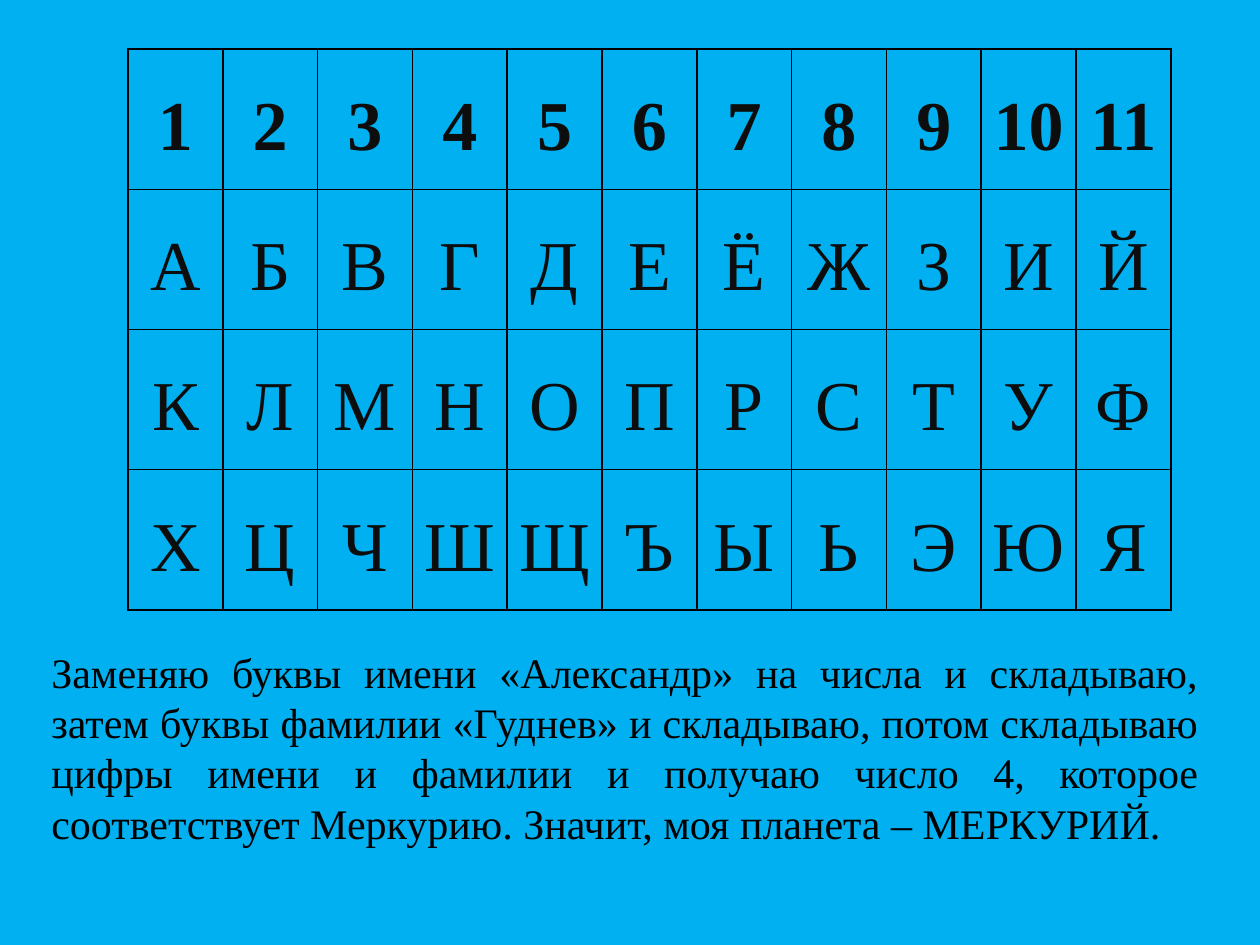
"""Build a slide with an alphabet number table and an explanation below it."""
from lxml import etree
from pptx import Presentation
from pptx.dml.color import RGBColor
from pptx.enum.text import MSO_ANCHOR, MSO_AUTO_SIZE, PP_ALIGN
from pptx.oxml.ns import qn
from pptx.util import Emu, Pt

CENTER, JUSTIFY = PP_ALIGN.CENTER, PP_ALIGN.JUSTIFY
MIDDLE = MSO_ANCHOR.MIDDLE
GROW = MSO_AUTO_SIZE.SHAPE_TO_FIT_TEXT
FONT = "Times New Roman"
ALPHABET = "АБВГДЕЁЖЗИЙКЛМНОПРСТУФХЦЧШЩЪЫЬЭЮЯ"
COLUMNS = 11
EXPLANATION = (
    "Заменяю буквы имени «Александр» на числа и складываю, "
    "затем буквы фамилии «Гуднев» и складываю, потом складываю "
    "цифры имени и фамилии и получаю число 4, которое "
    "соответствует Меркурию. Значит, моя планета – МЕРКУРИЙ."
)


def px(n):
    """Convert pixels to EMU at 126 pixels per inch."""
    return Emu(round(n * 914400 / 126))


def color(value):
    """Return the colour for a hex string."""
    return RGBColor.from_string(value)


def write(tf, text, size, fill="000000", bold=False, align=CENTER, spacing=None):
    """Write one formatted paragraph into a text frame."""
    p = tf.paragraphs[0]
    p.alignment = align
    p.line_spacing = spacing
    r = p.add_run()
    r.text = text
    r.font.name = FONT
    r.font.size = Pt(size)
    r.font.bold = bold
    r.font.color.rgb = color(fill)


def add_border(cell, side, width, fill="000000"):
    """Draw one side of a cell border."""
    ln = etree.SubElement(cell._tc.get_or_add_tcPr(), qn(f"a:ln{side}"), w=str(Pt(width)))
    solid = etree.SubElement(ln, qn("a:solidFill"))
    etree.SubElement(solid, qn("a:srgbClr"), val=fill)


def add_grid(slide, rows, x, y, w, h):
    """Add a transparent table with a bold first row and a heavier frame."""
    last_row, last_col = len(rows) - 1, len(rows[0]) - 1
    table = slide.shapes.add_table(len(rows), len(rows[0]), px(x), px(y), px(w), px(h)).table
    table.first_row = table.horz_banding = False
    for i, row in enumerate(rows):
        for j, text in enumerate(row):
            cell = table.cell(i, j)
            cell.vertical_anchor = MIDDLE
            cell.margin_left = cell.margin_right = px(9)
            cell.margin_top = cell.margin_bottom = 0
            outer = {"L": j == 0, "R": j == last_col, "T": i == 0, "B": i == last_row}
            for side, is_outer in outer.items():
                add_border(cell, side, 1.5 if is_outer else 1)
            cell.fill.background()
            write(cell.text_frame, text, 40, fill="0D0D0D", bold=i == 0, spacing=1.2)


def add_text(slide, text, x, y, w, h, **fmt):
    """Add a wrapping text box."""
    tf = slide.shapes.add_textbox(px(x), px(y), px(w), px(h)).text_frame
    tf.word_wrap = True
    tf.auto_size = GROW
    write(tf, text, **fmt)


def main():
    """Build and save the slide."""
    prs = Presentation()
    prs.slide_width, prs.slide_height = px(1260), px(945)
    slide = prs.slides.add_slide(prs.slide_layouts[6])
    slide.background.fill.solid()
    slide.background.fill.fore_color.rgb = color("00B0F0")
    numbers = [str(n) for n in range(1, COLUMNS + 1)]
    letters = [ALPHABET[i:i + COLUMNS] for i in range(0, len(ALPHABET), COLUMNS)]
    add_grid(slide, [numbers, *letters], 128, 49, 1043, 561)
    add_text(slide, EXPLANATION, 39, 640, 1172, 217, size=24, align=JUSTIFY)
    prs.save("out.pptx")


if __name__ == "__main__":
    main()
